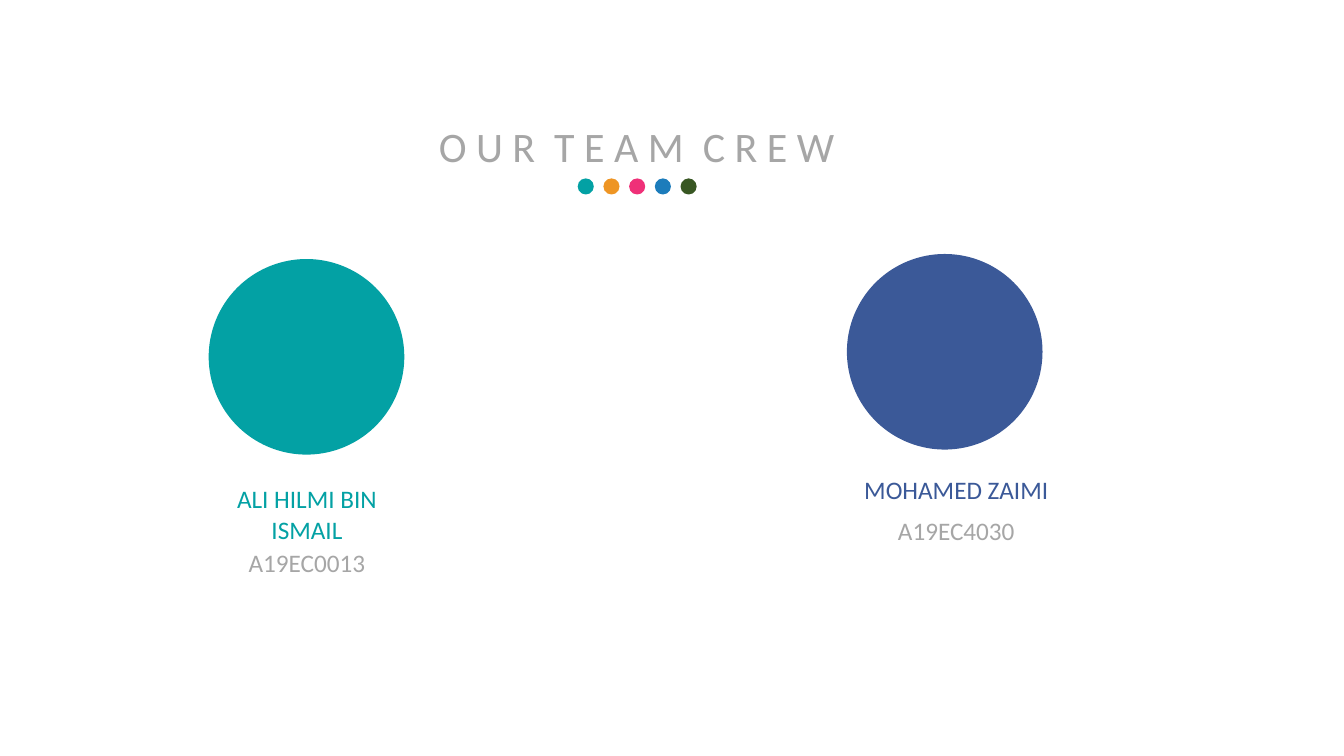
from dataclasses import dataclass

from pptx import Presentation
from pptx.dml.color import RGBColor
from pptx.enum.shapes import MSO_SHAPE
from pptx.enum.text import MSO_ANCHOR, MSO_AUTO_SIZE, PP_ALIGN
from pptx.shapes.shapetree import GroupShapes, SlideShapes
from pptx.text.text import TextFrame
from pptx.util import Inches, Pt

OVAL = MSO_SHAPE.OVAL
CENTER = PP_ALIGN.CENTER
TOP = MSO_ANCHOR.TOP
NO_AUTOFIT = MSO_AUTO_SIZE.NONE

TEAL = RGBColor(0x03, 0xA1, 0xA4)
ORANGE = RGBColor(0xEE, 0x95, 0x24)
PINK = RGBColor(0xEF, 0x30, 0x78)
BLUE = RGBColor(0x1C, 0x7C, 0xBB)
GREEN = RGBColor(0x38, 0x57, 0x23)
NAVY = RGBColor(0x3B, 0x59, 0x98)
GRAY = RGBColor(0xA6, 0xA6, 0xA6)

FONT = "Calibri"
DOT_COLORS = (TEAL, ORANGE, PINK, BLUE, GREEN)
DOT_LEFT, DOT_TOP, DOT_SIZE, DOT_STEP = 5.73, 1.77, 0.16, 0.255
PORTRAIT_SIZE = 1.94
LABEL_WIDTH, LINE_HEIGHT = 2.17, 0.4


@dataclass
class Member:
    name: str
    number: str
    color: RGBColor
    portrait_left: float
    portrait_top: float
    label_left: float
    name_top: float
    name_height: float
    number_top: float


MEMBERS = (
    Member("ALI HILMI BIN ISMAIL", "A19EC0013", TEAL,
           2.07, 2.57, 1.96, 4.75, 0.71, 5.38),
    Member("MOHAMED ZAIMI", "A19EC4030", NAVY,
           8.4, 2.52, 8.4, 4.66, LINE_HEIGHT, 5.06),
)


def write_text(tf: TextFrame, text: str, size: int, color: RGBColor) -> None:
    tf.word_wrap = True
    tf.auto_size = NO_AUTOFIT
    tf.vertical_anchor = TOP
    p = tf.paragraphs[0]
    p.text = text
    p.alignment = CENTER
    p.font.name = FONT
    p.font.size = Pt(size)
    p.font.color.rgb = color


def add_circle(shapes: SlideShapes | GroupShapes, left: float, top: float,
               size: float, color: RGBColor) -> None:
    sp = shapes.add_shape(OVAL, Inches(left), Inches(top), Inches(size), Inches(size))
    sp.shadow.inherit = False
    sp.fill.solid()
    sp.fill.fore_color.rgb = color
    sp.line.fill.background()


def add_label(shapes: GroupShapes, text: str, left: float, top: float,
              height: float, color: RGBColor) -> None:
    sp = shapes.add_textbox(Inches(left), Inches(top), Inches(LABEL_WIDTH), Inches(height))
    write_text(sp.text_frame, text, 18, color)


def add_member(shapes: SlideShapes, member: Member) -> None:
    add_circle(shapes, member.portrait_left, member.portrait_top,
               PORTRAIT_SIZE, member.color)
    labels = shapes.add_group_shape().shapes
    add_label(labels, member.name, member.label_left, member.name_top,
              member.name_height, member.color)
    add_label(labels, member.number, member.label_left, member.number_top,
              LINE_HEIGHT, GRAY)


def main() -> None:
    prs = Presentation()
    prs.slide_width, prs.slide_height = Inches(13.33), Inches(7.5)
    slide = prs.slides.add_slide(prs.slide_layouts.get_by_name("Title Only"))
    shapes = slide.shapes

    # Title
    title = shapes.title
    title.left, title.top = Inches(3.33), Inches(1.15)
    title.width, title.height = Inches(5.97), Inches(0.61)
    write_text(title.text_frame, "O U R  T E A M  C R E W", 30, GRAY)

    # Row of dots under the title
    dots = shapes.add_group_shape().shapes
    for i, color in enumerate(DOT_COLORS):
        add_circle(dots, DOT_LEFT + i * DOT_STEP, DOT_TOP, DOT_SIZE, color)

    # Team members
    for member in MEMBERS:
        add_member(shapes, member)

    prs.save("out.pptx")


if __name__ == "__main__":
    main()
